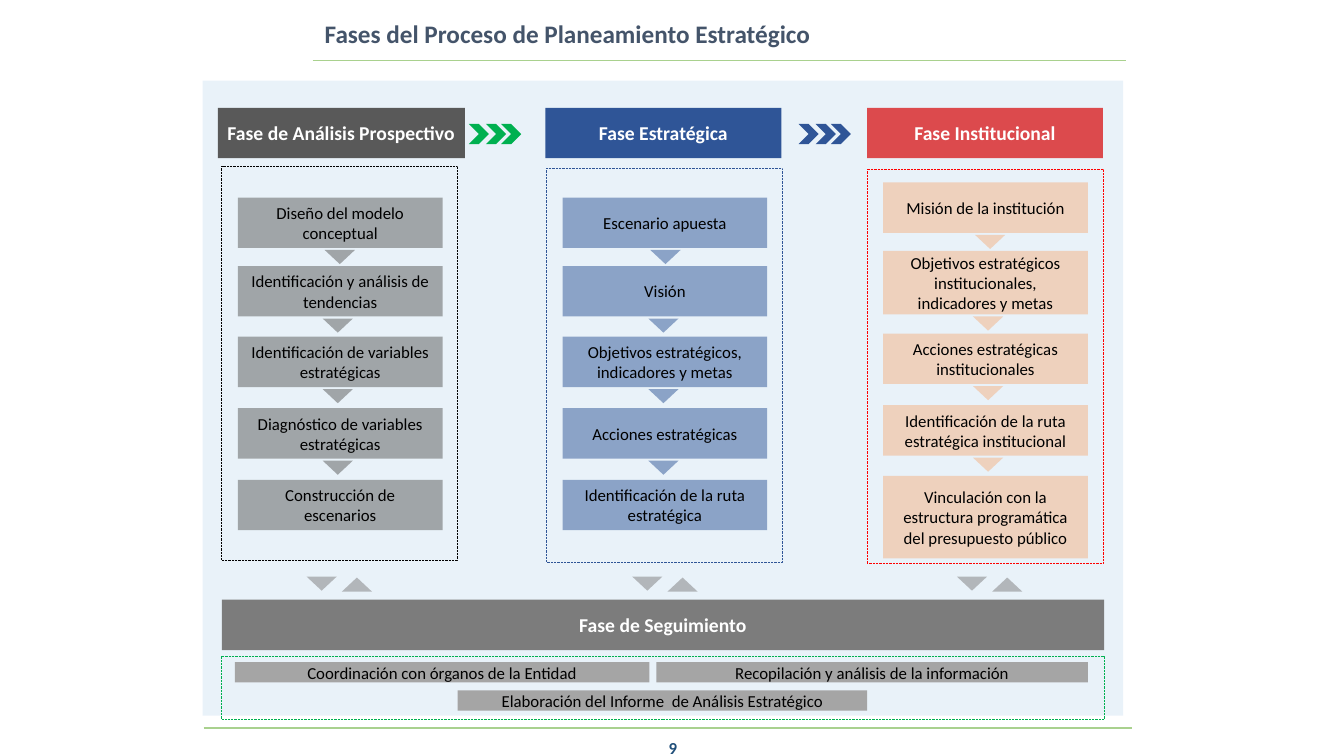
from lxml import etree
from pptx import Presentation
from pptx import util as u
from pptx.dml.color import RGBColor
from pptx.enum import dml, shapes, text
from pptx.oxml.ns import qn

TITLE = "Fases del Proceso de Planeamiento Estratégico"
PAGE = "9"

STEP_ROWS = [(1.96, 0.5), (2.64, 0.5), (3.34, 0.5), (4.05, 0.5), (4.76, 0.5)]
PHASES = [
    dict(name="Fase de Análisis Prospectivo", color="595959", tint="595959", outline="000000",
         header=(2.16, 2.45), frame=(2.2, 1.65), arrow_left=3.2, rows=STEP_ROWS,
         steps=["Diseño del modelo conceptual",
                "Identificación y análisis de tendencias",
                "Identificación de variables estratégicas",
                "Diagnóstico de variables estratégicas",
                "Construcción de escenarios"]),
    dict(name="Fase Estratégica", color="2F5597", tint="2F5597", outline="2F5597",
         header=(5.41, 2.34), frame=(5.42, 1.67), arrow_left=6.43, rows=STEP_ROWS,
         steps=["Escenario apuesta",
                "Visión",
                "Objetivos estratégicos, indicadores y metas",
                "Acciones estratégicas",
                "Identificación de la ruta estratégica"]),
    dict(name="Fase Institucional", color="DC4A4D", tint="F4B183", outline="FF0000",
         header=(8.6, 2.34), frame=(8.6, 1.68), arrow_left=9.65,
         rows=[(1.81, 0.5), (2.49, 0.63), (3.31, 0.5), (4.02, 0.5), (4.72, 0.82)],
         steps=["Misión de la institución",
                "Objetivos estratégicos institucionales, indicadores y metas",
                "Acciones estratégicas institucionales",
                "Identificación de la ruta estratégica institucional",
                "Vinculación con la estructura programática del presupuesto público"]),
]
CHEVRON_GROUPS = [(4.65, "00B050"), (7.92, "2F5597")]
FOLLOW_UP = "Fase de Seguimiento"
FOLLOW_UP_TASKS = [
    ("Coordinación con órganos de la Entidad", 2.33, 6.57, 4.11),
    ("Elaboración del Informe  de Análisis Estratégico", 4.54, 6.85, 4.06),
    ("Recopilación y análisis de la información", 6.51, 6.57, 4.28),
]
RULES = [(2.02, 11.23, 7.22), (3.1, 11.17, 0.6)]

FRAME_W, FRAME_H = 2.34, 3.91
STEP_W, STEP_INSET = 2.03, 0.16
ARROW_W, ARROW_H, ARROW_GAP = 0.3, 0.14, 0.02
BAND_LEFT, BAND_W = 2.2, 8.75

KINDS = shapes.MSO_SHAPE
deck = Presentation()
deck.slide_width, deck.slide_height = u.Inches(13.33), u.Inches(7.5)
slide = deck.slides.add_slide(deck.slide_layouts[5])


def rgb(code):
    return RGBColor.from_string(code)


def write(frame, words, size, color, bold=False, align=text.PP_ALIGN.CENTER):
    frame.text = words
    frame.word_wrap = True
    frame.auto_size = text.MSO_AUTO_SIZE.NONE
    frame.vertical_anchor = text.MSO_ANCHOR.MIDDLE
    line = frame.paragraphs[0]
    line.alignment = align
    line.font.name, line.font.size, line.font.bold = "Calibri", u.Pt(size), bold
    line.font.color.rgb = rgb(color)


def add(kind, left, top, width, height, fill=None, alpha=100, outline=None):
    """Add a preset shape; alpha is the opacity of its fill in percent."""
    shape = slide.shapes.add_shape(kind, *map(u.Inches, (left, top, width, height)))
    shape.shadow.inherit = False
    if fill:
        shape.fill.solid()
        shape.fill.fore_color.rgb = rgb(fill)
        if alpha < 100:
            tone = shape.fill._xPr.find(qn("a:solidFill"))[0]
            etree.SubElement(tone, qn("a:alpha")).set("val", str(alpha * 1000))
    else:
        shape.fill.background()
    if outline:
        shape.line.color.rgb = rgb(outline)
        shape.line.width = u.Pt(0.5)
        shape.line.dash_style = dml.MSO_LINE.ROUND_DOT
    else:
        shape.line.fill.background()
    return shape


def add_header(words, left, top, width, color):
    header = add(KINDS.RECTANGLE, left, top, width, 0.5, color)
    header.text_frame.margin_left = header.text_frame.margin_right = u.Inches(0.05)
    write(header.text_frame, words, 14, "FFFFFF", bold=True)


def add_arrow(left, top, color, down=True):
    arrow = add(KINDS.ISOSCELES_TRIANGLE, left, top, ARROW_W, ARROW_H, color, 50)
    arrow.rotation = 180 if down else 0


def add_phase(phase):
    left, top = phase["frame"]
    header_left, header_width = phase["header"]
    add_header(phase["name"], header_left, 1.07, header_width, phase["color"])
    add(KINDS.RECTANGLE, left, top, FRAME_W, FRAME_H, outline=phase["outline"])
    last = len(phase["steps"]) - 1
    for i, (words, (row, height)) in enumerate(zip(phase["steps"], phase["rows"])):
        step = add(KINDS.RECTANGLE, left + STEP_INSET, row, STEP_W, height, phase["tint"], 50)
        write(step.text_frame, words, 12, "000000")
        if i < last:
            nudge = 0.02 if i == 0 else 0
            add_arrow(phase["arrow_left"] + nudge, row + height + ARROW_GAP, phase["tint"])
    add_arrow(phase["arrow_left"] - 0.16, 5.72, "7C7C7C")
    add_arrow(phase["arrow_left"] + 0.19, 5.73, "7C7C7C", down=False)


add(KINDS.RECTANGLE, 2.01, 0.8, 9.13, 6.3, "5B9BD5", 13)

for start, end, y in RULES:
    rule = slide.shapes.add_connector(shapes.MSO_CONNECTOR.STRAIGHT,
                                      *map(u.Inches, (start, y, end, y)))
    rule.line.color.rgb = rgb("A9D18E")
    rule.line.width = u.Pt(1.25)
    etree.SubElement(rule._element.spPr, qn("a:effectLst"))

title = slide.shapes.title
title.left, title.top, title.width, title.height = map(u.Inches, (3.12, 0.08, 8.03, 0.5))
write(title.text_frame, TITLE, 18, "44546A", bold=True, align=text.PP_ALIGN.LEFT)

page = slide.shapes.add_textbox(*map(u.Inches, (5.51, 7.22, 2.33, 0.4)))
write(page.text_frame, PAGE, 12, "1F4E79", bold=True)

for phase in PHASES:
    add_phase(phase)

for left, color in CHEVRON_GROUPS:
    for offset in (0, 0.17, 0.32):
        add(KINDS.CHEVRON, left + offset, 1.23, 0.2, 0.2, color)

add_header(FOLLOW_UP, BAND_LEFT, 5.95, BAND_W, "7C7C7C")
add(KINDS.RECTANGLE, BAND_LEFT, 6.51, BAND_W, 0.63, outline="00B050")
for words, left, top, width in FOLLOW_UP_TASKS:
    task = add(KINDS.RECTANGLE, left, top, width, 0.2, "A5A5A5")
    write(task.text_frame, words, 12, "000000")

deck.save("out.pptx")
